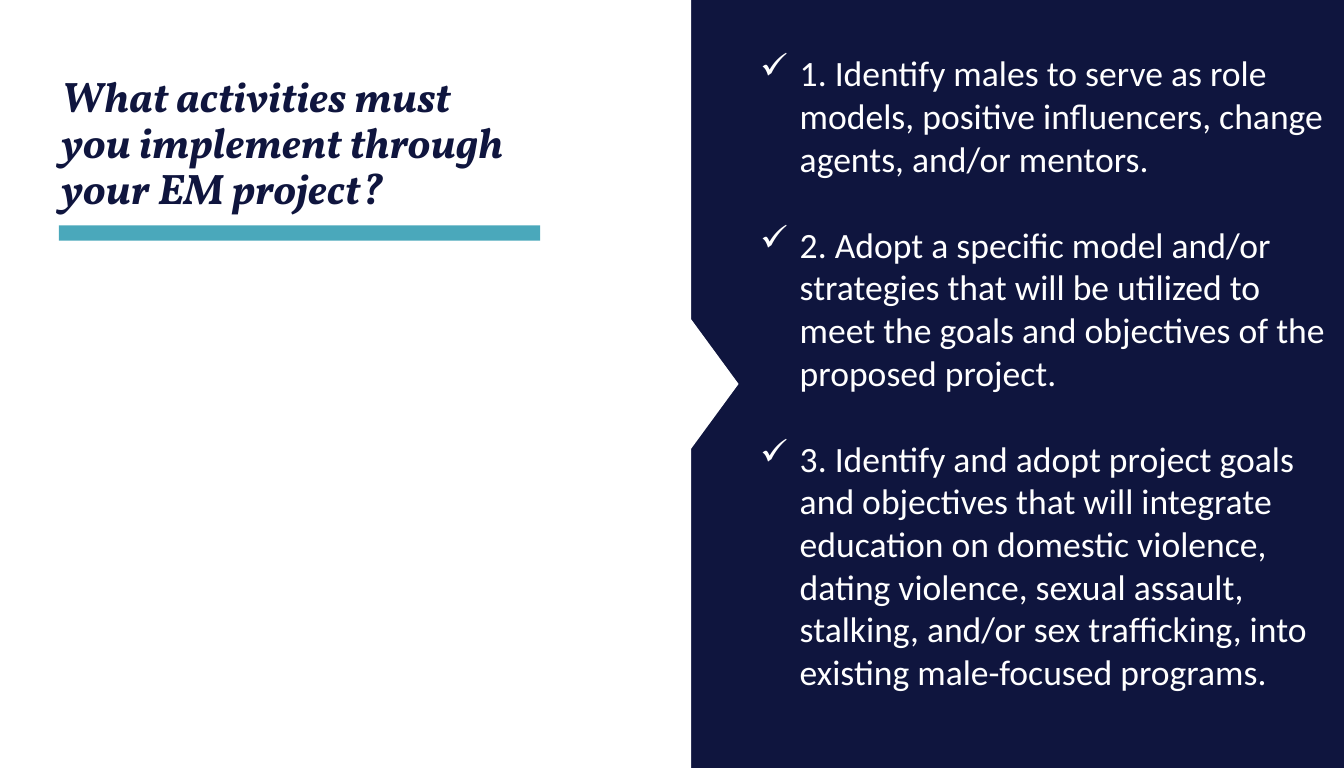
from dataclasses import dataclass

from lxml import etree
from pptx import Presentation
from pptx.dml.color import RGBColor
from pptx.enum.shapes import MSO_SHAPE
from pptx.enum.text import MSO_ANCHOR, MSO_AUTO_SIZE, PP_ALIGN
from pptx.oxml.ns import qn
from pptx.util import Inches, Pt

RECTANGLE = MSO_SHAPE.RECTANGLE
TRIANGLE = MSO_SHAPE.ISOSCELES_TRIANGLE
BOTTOM, TOP = MSO_ANCHOR.BOTTOM, MSO_ANCHOR.TOP
LEFT = PP_ALIGN.LEFT
NO_AUTOFIT = MSO_AUTO_SIZE.NONE

NAVY, WHITE, TEAL = "0F153E", "FFFFFF", "4AA8BB"
TITLE_FONT, BODY_FONT = "Vollkorn", "Calibri"

# The slide is a grid of square cells
CELL = Inches(0.1)
COLUMNS, ROWS = 105, 60
SPLIT = 54  # column where the white half meets the navy half

TITLE = "What activities must you implement through your EM project?"
ACTIVITIES = [
    "1. Identify males to serve as role models, positive influencers, change "
    "agents, and/or mentors.",
    "2. Adopt a specific model and/or strategies that will be utilized to meet "
    "the goals and objectives of the proposed project.",
    "3. Identify and adopt project goals and objectives that will integrate "
    "education on domestic violence, dating violence, sexual assault, stalking, "
    "and/or sex trafficking, into existing male-focused programs.",
]


@dataclass(frozen=True)
class Area:
    column: float
    row: float
    columns: float
    rows: float

    def lengths(self) -> list[int]:
        return [round(n * CELL) for n in (self.column, self.row, self.columns, self.rows)]


@dataclass(frozen=True)
class Block:
    area: Area
    fill: str
    kind: MSO_SHAPE = RECTANGLE
    rotation: float = 0


TITLE_AREA = Area(3.8, 3.5, 38.4, 13.7)
LIST_AREA = Area(58.4, 3.5, COLUMNS - 58.4, 54.9)
POINTER_BASE, POINTER_DEPTH = 10.1, 3.7

BLOCKS = [
    Block(Area(SPLIT, 0, COLUMNS - SPLIT, ROWS), NAVY),
    Block(Area(0, 0, SPLIT, ROWS), WHITE),
    Block(Area(4.6, 17.6, 37.6, 1.2), TEAL),
    # Turned a quarter, the pointer's base lies on the split
    Block(Area(SPLIT + (POINTER_DEPTH - POINTER_BASE) / 2, (ROWS - POINTER_DEPTH) / 2,
               POINTER_BASE, POINTER_DEPTH), WHITE, TRIANGLE, 90),
]


def color(value: str) -> RGBColor:
    return RGBColor.from_string(value)


def draw_block(page, block: Block) -> None:
    shape = page.shapes.add_shape(block.kind, *block.area.lengths())
    shape.shadow.inherit = False
    shape.fill.solid()
    shape.fill.fore_color.rgb = color(block.fill)
    shape.line.fill.background()
    shape.rotation = block.rotation


def add_run(para, text: str, font: str, size: float, fill: str, strong: bool = False) -> None:
    span = para.add_run()
    span.text = text
    span.font.name = font
    span.font.size = Pt(size)
    span.font.color.rgb = color(fill)
    span.font.bold = span.font.italic = strong


def add_check_mark(para) -> None:
    properties = para._p.get_or_add_pPr()
    properties.set("marL", str(Inches(0.31)))
    properties.set("indent", str(-Inches(0.31)))
    etree.SubElement(properties, qn("a:buChar")).set("char", "✓")


def place_title(page) -> None:
    box = page.shapes.title
    box.left, box.top, box.width, box.height = TITLE_AREA.lengths()
    page.shapes._spTree.append(box._element)  # in front of the panels
    frame = box.text_frame
    frame.word_wrap = True
    frame.auto_size = NO_AUTOFIT
    frame.vertical_anchor = BOTTOM
    para = frame.paragraphs[0]
    para.alignment = LEFT
    para.line_spacing = 0.9
    add_run(para, TITLE, TITLE_FONT, 24, NAVY, strong=True)


def draw_list(page, items: list[str]) -> None:
    frame = page.shapes.add_textbox(*LIST_AREA.lengths()).text_frame
    frame.word_wrap = True
    frame.vertical_anchor = TOP
    frame.margin_right = Inches(0.03)
    for index, item in enumerate(items):
        para = frame.add_paragraph() if index else frame.paragraphs[0]
        add_check_mark(para)
        if index:
            para.space_before = Pt(24.4)  # one line of body text
        add_run(para, item, BODY_FONT, 20, WHITE)


def main() -> None:
    deck = Presentation()
    deck.slide_width, deck.slide_height = COLUMNS * CELL, ROWS * CELL
    page = deck.slides.add_slide(deck.slide_layouts.get_by_name("Title Only"))
    for block in BLOCKS:
        draw_block(page, block)
    place_title(page)
    draw_list(page, ACTIVITIES)
    deck.save("out.pptx")


if __name__ == "__main__":
    main()
